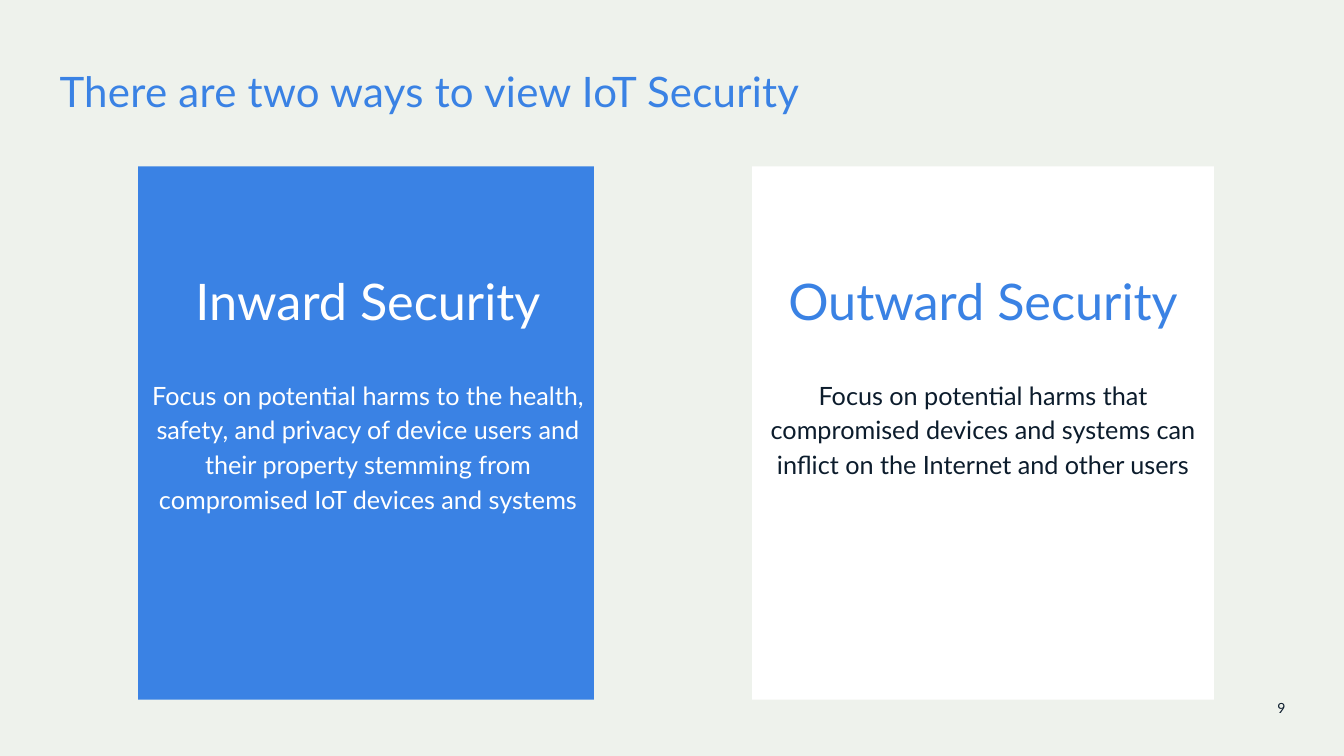
from lxml.etree import SubElement
from pptx import Presentation
from pptx.dml.color import RGBColor
from pptx.enum.text import MSO_ANCHOR, MSO_AUTO_SIZE, PP_ALIGN
from pptx.oxml.ns import qn
from pptx.util import Inches, Pt

BLUE = RGBColor(0x3A, 0x82, 0xE4)
WHITE = RGBColor(0xFF, 0xFF, 0xFF)
NAVY = RGBColor(0x0C, 0x1C, 0x2C)
MIST = RGBColor(0xEE, 0xF2, 0xEC)


def place(sp, box, insets=(0, 0, 0, 0)):
    """Move a shape to its box and return its text frame, set up with insets."""
    for name, value in zip(("left", "top", "width", "height"), box):
        setattr(sp, name, Inches(value))
    tf = sp.text_frame
    for side, value in zip(("left", "top", "right", "bottom"), insets):
        setattr(tf, f"margin_{side}", Inches(value))
    tf.word_wrap = True
    tf.auto_size = MSO_AUTO_SIZE.NONE
    tf.vertical_anchor = MSO_ANCHOR.TOP
    return tf


def write(p, text, size, color, **formats):
    """Write one unbulleted run into a paragraph and apply its formats."""
    pPr = p._p.get_or_add_pPr()
    pPr.set("marL", "0")
    pPr.set("indent", "0")
    SubElement(pPr, qn("a:buNone"))
    for name, value in {"space_before": Pt(0), **formats}.items():
        setattr(p, name, value)
    r = p.add_run()
    r.text = text
    for name, value in {"name": "Lato", "size": Pt(size), "bold": False}.items():
        setattr(r.font, name, value)
    r.font.color.rgb = color
    return r


def add_title(s, box, text):
    """Fill the title placeholder."""
    tf = place(s.shapes.title, box)
    r = write(tf.paragraphs[0], text, 30, BLUE,
              alignment=PP_ALIGN.LEFT, line_spacing=1.06)
    r._r.get_or_add_rPr().set("spc", "20")


def add_panel(sp, box, insets, fill, heading, heading_color, body, body_color):
    """Turn a body placeholder into a filled panel with heading and text."""
    tf = place(sp, box, insets)
    sp.fill.solid()
    sp.fill.fore_color.rgb = fill
    shared = {"alignment": PP_ALIGN.CENTER, "line_spacing": 1.15}
    write(tf.paragraphs[0], heading, 36, heading_color,
          space_after=Pt(32), **shared)
    write(tf.add_paragraph(), body, 18, body_color, level=1, **shared)


def add_page_number(s, box, number):
    """Add the right-aligned page number."""
    sp = s.shapes.add_textbox(0, 0, 0, 0)
    write(place(sp, box).paragraphs[0], number, 10, NAVY,
          alignment=PP_ALIGN.RIGHT)


def main():
    """Build and save the slide."""
    prs = Presentation()
    prs.slide_width, prs.slide_height = Inches(13.33), Inches(7.5)
    s = prs.slides.add_slide(prs.slide_layouts[3])
    s.background.fill.solid()
    s.background.fill.fore_color.rgb = MIST
    add_title(s, (0.59, 0.62, 12.16, 0.67),
              "There are two ways to view IoT Security")
    top, height = 1.65, 5.29
    add_panel(s.placeholders[1], (1.37, top, 4.52, height),
              (0.12, 0.94, 0.08, 0), BLUE, "Inward Security", WHITE,
              "Focus on potential harms to the health, safety, and privacy of "
              "device users and their property stemming from compromised IoT "
              "devices and systems", WHITE)
    add_panel(s.placeholders[2], (7.46, top, 4.58, height),
              (0.04, 0.94, 0.04, 0), WHITE, "Outward Security", BLUE,
              "Focus on potential harms that compromised devices and systems "
              "can inflict on the Internet and other users", NAVY)
    add_page_number(s, (9.75, top + height, 3, 0.19), "9")
    prs.save("out.pptx")


if __name__ == "__main__":
    main()
